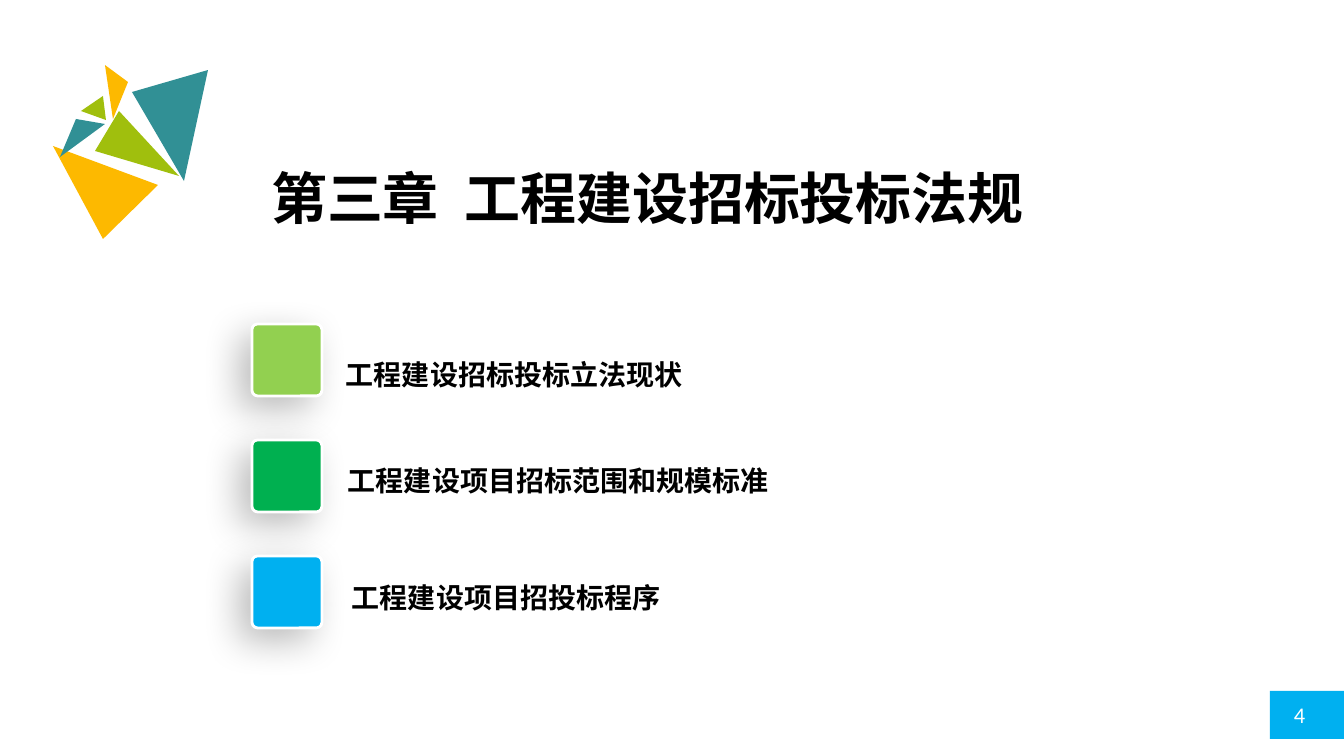
from lxml.etree import SubElement
from pptx import Presentation
from pptx.dml.color import RGBColor
from pptx.enum.shapes import MSO_SHAPE as Shape
from pptx.enum.text import MSO_ANCHOR as Anchor, PP_ALIGN as Align
from pptx.oxml import parse_xml
from pptx.oxml.ns import nsdecls, qn
from pptx.util import Pt

PX = 914400 / 100.8
CJK_FONT = "Noto Sans CJK SC"
TEAL = RGBColor(0x31, 0x90, 0x95)
OLIVE = RGBColor(0xA0, 0xBF, 0x0D)
AMBER = RGBColor(0xFD, 0xB9, 0x00)
LIME = RGBColor(0x92, 0xD0, 0x50)
GREEN = RGBColor(0x00, 0xB0, 0x50)
BLUE = RGBColor(0x00, 0xB0, 0xF0)
WHITE = RGBColor(0xFF, 0xFF, 0xFF)
BLACK = RGBColor(0x00, 0x00, 0x00)


def px(*lengths):
    return [round(length * PX) for length in lengths]


def write_heading(frame, text, size, spacing):
    frame.text = text
    frame.word_wrap = True
    frame.vertical_anchor = Anchor.TOP
    paragraph = frame.paragraphs[0]
    paragraph.alignment = Align.LEFT
    paragraph.line_spacing = spacing
    font = paragraph.runs[0].font
    font.name, font.size, font.bold = CJK_FONT, Pt(size), True
    font.color.rgb = BLACK
    SubElement(font._element, qn("a:ea")).set("typeface", CJK_FONT)


deck = Presentation()
deck.slide_width, deck.slide_height = px(1344, 756)
slide = deck.slides.add_slide(deck.slide_layouts[5])
shapes = slide.shapes

page_tag = shapes.add_shape(Shape.RECTANGLE, *px(1270, 691, 74, 48))
page_tag.shadow.inherit = False
page_tag.fill.solid()
page_tag.fill.fore_color.rgb = BLUE
page_tag.line.fill.background()
page_frame = page_tag.text_frame
page_frame.text = "4"
page_frame.margin_left, page_frame.margin_right = px(24, 0)
page_frame.vertical_anchor = Anchor.MIDDLE
page_frame.paragraphs[0].alignment = Align.LEFT
page_font = page_frame.paragraphs[0].runs[0].font
page_font.name, page_font.size = "Calibri", Pt(16)
page_font.color.rgb = WHITE

SHARDS = [
    (TEAL, [(208, 70), (184, 181), (132, 92)]),
    (OLIVE, [(95, 151), (179, 176), (119, 111)]),
    (AMBER, [(103, 239), (158, 185), (53, 146)]),
    (TEAL, [(60, 157), (105, 124), (76, 119)]),
    (OLIVE, [(103, 96), (106, 120), (81, 111)]),
    (AMBER, [(128, 82), (113, 119), (105, 65)]),
]
for color, corners in SHARDS:
    outline = shapes.build_freeform(*corners[0], scale=PX)
    outline.add_line_segments(corners[1:], close=True)
    shard = outline.convert_to_shape()
    shard.shadow.inherit = False
    shard.fill.solid()
    shard.fill.fore_color.rgb = color
    shard.line.fill.background()

chapter = shapes.title
chapter.left, chapter.top, chapter.width, chapter.height = px(261, 166, 941, 97)
write_heading(chapter.text_frame, "第三章  工程建设招标投标法规", 40, 0.9)

SECTIONS = [
    ("工程建设招标投标立法现状", LIME, 336, 316, 82, 2.1),
    ("工程建设项目招标范围和规模标准", GREEN, 338, 442, 60, 1.5),
    ("工程建设项目招投标程序", BLUE, 342, 539, 82, 2.1),
]
for row, (text, color, left, top, height, spacing) in enumerate(SECTIONS):
    marker = shapes.add_shape(Shape.ROUNDED_RECTANGLE, *px(252, 324 + 116 * row, 70, 72))
    marker.adjustments[0] = 0.08
    marker.fill.solid()
    marker.fill.fore_color.rgb = color
    marker.line.color.rgb = WHITE
    marker.line.width = Pt(2)
    marker._element.spPr.append(parse_xml(
        f'<a:effectLst {nsdecls("a")}><a:outerShdw blurRad="{Pt(27)}" dist="{Pt(12)}" '
        'dir="8100000" algn="ctr" rotWithShape="0"><a:srgbClr val="000000">'
        '<a:alpha val="26000"/></a:srgbClr></a:outerShdw></a:effectLst>'))
    label = shapes.add_textbox(*px(left, top, 672, height))
    write_heading(label.text_frame, text, 20, spacing)

deck.save("out.pptx")
